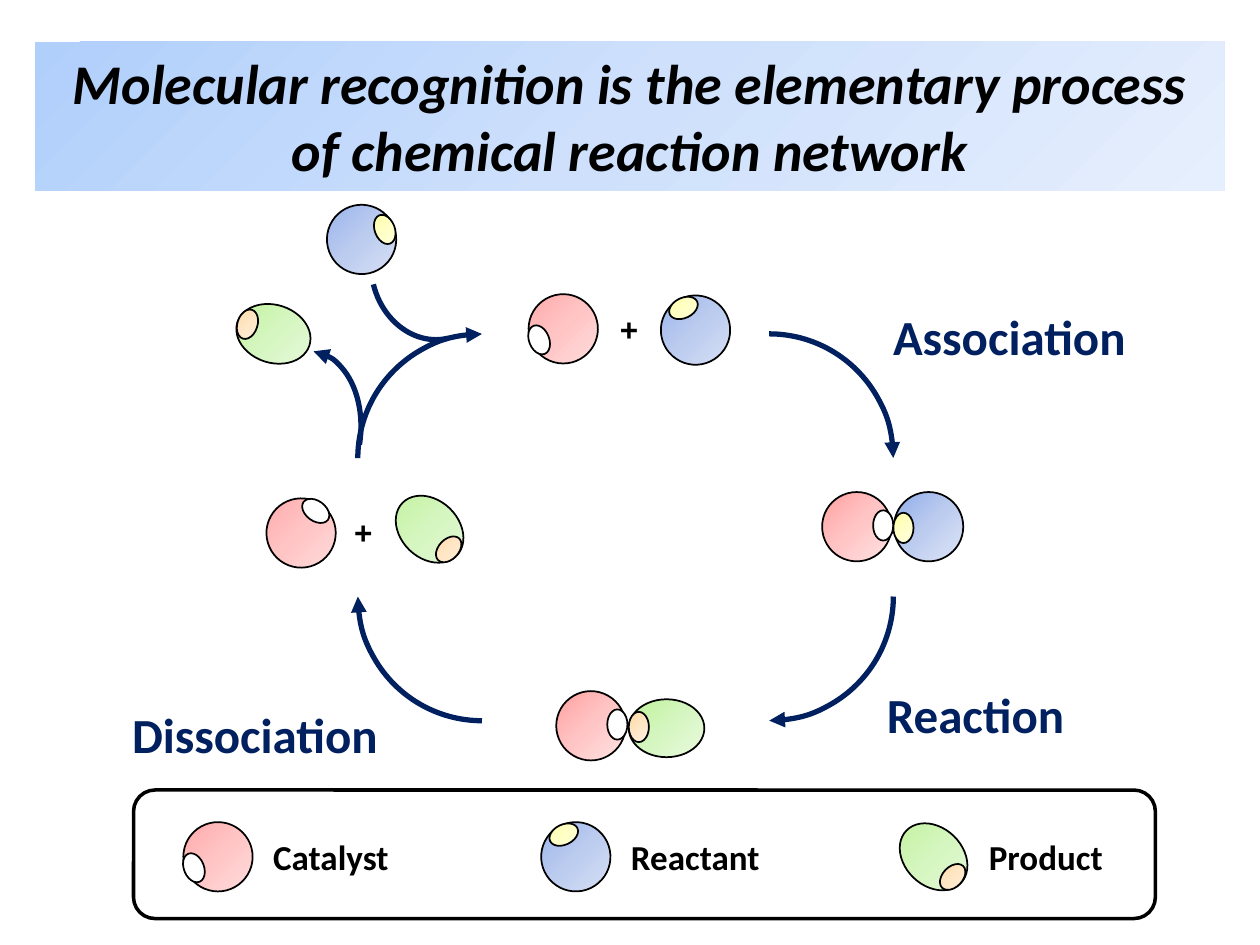
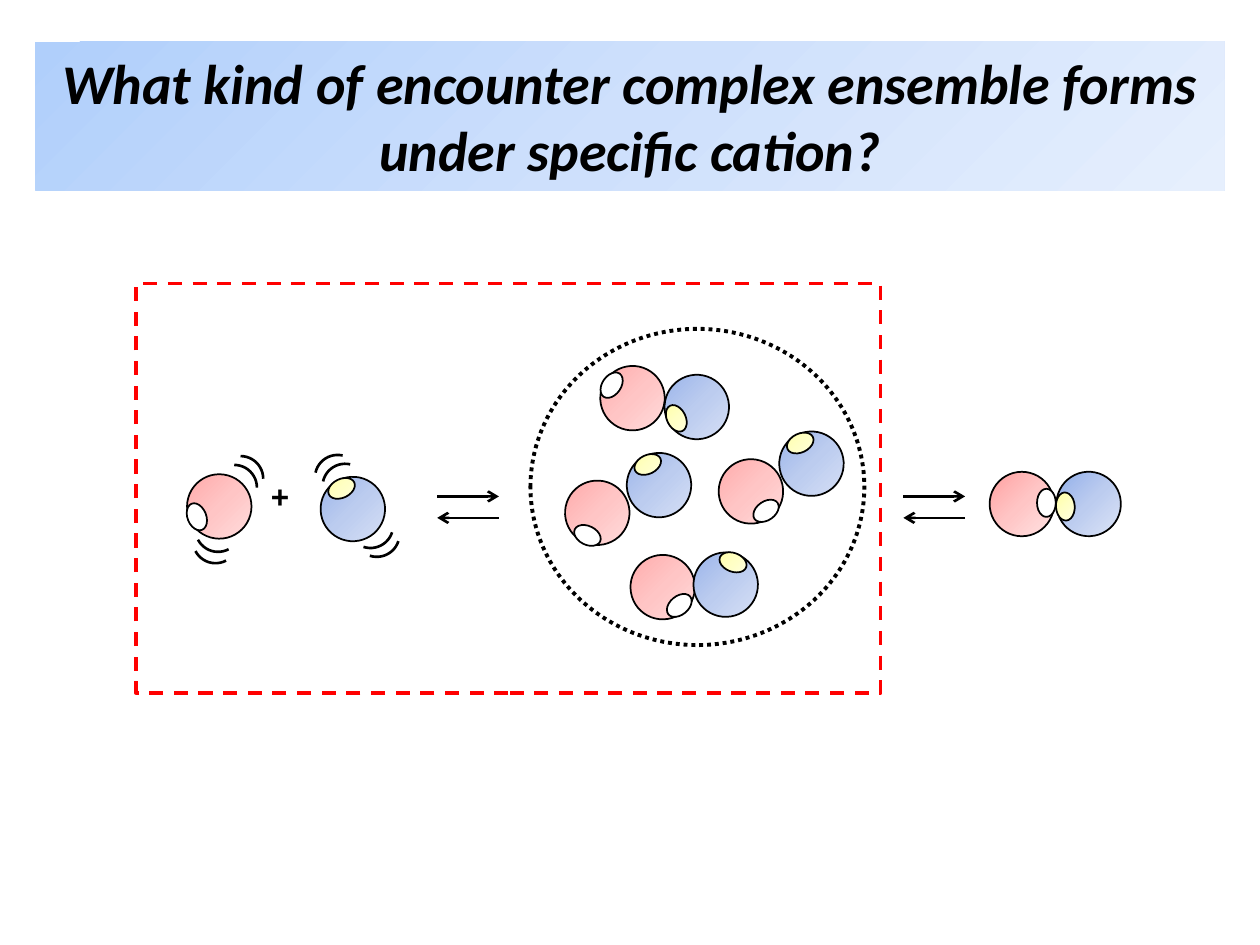
from math import cos, radians, sin

from lxml import etree
from pptx import Presentation
from pptx.dml.color import RGBColor
from pptx.enum.dml import MSO_LINE
from pptx.enum.shapes import MSO_CONNECTOR, MSO_SHAPE
from pptx.enum.text import MSO_ANCHOR, PP_ALIGN
from pptx.oxml.ns import qn
from pptx.util import Inches, Pt

ELLIPSE, ARC = MSO_SHAPE.OVAL, MSO_SHAPE.ARC
RECTANGLE, ROUNDED = MSO_SHAPE.RECTANGLE, MSO_SHAPE.ROUNDED_RECTANGLE
STRAIGHT = MSO_CONNECTOR.STRAIGHT
DASH, DOT = MSO_LINE.DASH, MSO_LINE.ROUND_DOT
MIDDLE, CENTER = MSO_ANCHOR.MIDDLE, PP_ALIGN.CENTER

BLACK = RGBColor(0x00, 0x00, 0x00)
WHITE = RGBColor(0xFF, 0xFF, 0xFF)
RED = RGBColor(0xFF, 0x00, 0x00)
NAVY = RGBColor(0x00, 0x20, 0x60)
PINKS = [RGBColor(0xFF, 0xA0, 0xA0), RGBColor(0xFF, 0xC5, 0xC5), RGBColor(0xFF, 0xE3, 0xE3)]
BLUES = [RGBColor(0x8F, 0xAD, 0xE9), RGBColor(0xBC, 0xCC, 0xEF), RGBColor(0xDE, 0xE6, 0xF7)]
GREENS = [RGBColor(0xBE, 0xF2, 0x97), RGBColor(0xD5, 0xF6, 0xC0), RGBColor(0xEA, 0xFA, 0xE0)]
YELLOWS = [RGBColor(0xFF, 0xFF, 0xA0), RGBColor(0xFF, 0xFF, 0xC5), RGBColor(0xFF, 0xFF, 0xE3)]
ORANGES = [RGBColor(0xFF, 0xD8, 0xA0), RGBColor(0xFF, 0xE6, 0xC5), RGBColor(0xFF, 0xF2, 0xE3)]
SKIES = [RGBColor(0xB0, 0xCF, 0xFB), RGBColor(0xCE, 0xE0, 0xFC), RGBColor(0xE6, 0xEF, 0xFD)]

SLIDE_SIZE = (10, 7.5)
TITLE_BOX = (0.28, 0.33, 9.44, 1.18)
SANS, MONO = "Calibri", "Courier New"

# kind: body width, body height, body fill, site fill, site offset across and along
MOLECULES = {
    "Catalyst": (0.55, 0.55, PINKS, WHITE, 0.01, 0.21),
    "Reactant": (0.55, 0.55, BLUES, YELLOWS, 0.01, 0.2),
    "Product": (0.46, 0.6, GREENS, ORANGES, -0.01, 0.22),
}
SITE = (0.24, 0.16)

CYCLE_TITLE = "Molecular recognition is the elementary process of chemical reaction network"
CYCLE_MOLECULES = [
    ("Catalyst", 4.47, 2.61, 68.2), ("Reactant", 5.52, 2.62, 154.3),
    ("Catalyst", 6.8, 4.18, 270), ("Reactant", 7.37, 4.18, 90),
    ("Catalyst", 4.69, 5.76, 270), ("Product", 5.29, 5.78, 90),
    ("Catalyst", 2.39, 4.23, 216.3), ("Product", 3.41, 4.2, 314),
    ("Reactant", 2.87, 1.9, 249.5), ("Product", 2.17, 2.65, 107.8),
]
CYCLE_PLUSES = [(4.82, 2.41), (2.71, 4.02)]
CYCLE_ARCS = [(5.12, 2.65), (5.12, 3.75), (2.84, 3.75), (2.84, 2.65)]
CYCLE_ARC_SIZE = 1.97
BRANCHES = [((2.87, 1.67, 1.11, 0.95), 256.4, None), ((1.71, 2.98, 1.35, 0.95), 98.9, "triangle")]
STEPS = [
    ("Association", 6.99, 2.38, 2.07),
    ("Reaction", 6.94, 5.38, 1.63),
    ("Dissociation", 0.95, 5.54, 2.17),
]
LEGEND_BOX = (1.06, 6.27, 8.11, 1.02)
LEGEND = [("Catalyst", 68.2), ("Reactant", 154.3), ("Product", 314)]
LEGEND_LEFT, LEGEND_STEP, LEGEND_MIDDLE = 1.73, 2.84, 6.8
LEGEND_LABEL_SIZE = (1.3, 0.44)

ENCOUNTER_TITLE = "What kind of encounter complex ensemble forms under specific cation?"
ENCOUNTER_SCALE = 0.93
ENCOUNTER_MOLECULES = [
    ("Catalyst", 1.74, 4.02, 68.2), ("Reactant", 2.8, 4.04, 154.3),
    ("Catalyst", 5.02, 3.16, 124.6), ("Reactant", 5.53, 3.23, 63.8),
    ("Catalyst", 4.74, 4.07, 26.2), ("Reactant", 5.23, 3.85, 154.3),
    ("Catalyst", 5.96, 3.9, 324.9), ("Reactant", 6.44, 3.68, 154.3),
    ("Catalyst", 5.26, 4.66, 320.6), ("Reactant", 5.76, 4.64, 201),
    ("Catalyst", 8.11, 4, 270), ("Reactant", 8.64, 4, 86.6),
]
TREMORS = [
    (0, [(1.68, 3.69), (1.73, 3.62)]),
    (152.3, [(1.55, 4.02), (1.53, 4.11)]),
    (282.8, [(2.56, 3.68), (2.5, 3.61)]),
    (108, [(2.76, 3.99), (2.81, 4.06)]),
]
TREMOR_SIZE = 0.36
ENCOUNTER_PLUS = (2.05, 3.74)
EQUILIBRIA, EQUILIBRIUM_WIDTH = [3.47, 7.17], 0.49
FORWARD_Y, BACKWARD_Y = 3.94, 4.11
ENSEMBLE_RING = (4.21, 2.61, 2.65, 2.51)
FOCUS_FRAME = (1.08, 2.25, 5.91, 3.25)


def paint(shape, fill):
    """Fill a shape with nothing, one colour or a diagonal run of colours."""
    if fill is None:
        shape.fill.background()
    elif isinstance(fill, RGBColor):
        shape.fill.solid()
        shape.fill.fore_color.rgb = fill
    else:
        shape.fill.gradient()
        gradient = shape._element.spPr.find(qn("a:gradFill"))
        gradient.set("rotWithShape", "0")
        for child in list(gradient):
            gradient.remove(child)
        stops = etree.SubElement(gradient, qn("a:gsLst"))
        for index, colour in enumerate(fill):
            stop = etree.SubElement(stops, qn("a:gs"), pos=str(index * 50000))
            etree.SubElement(stop, qn("a:srgbClr"), val=str(colour))
        etree.SubElement(gradient, qn("a:lin"), ang="2700000", scaled="0")


def add_figure(slide, preset, box, fill=None, line=BLACK, width=1, turn=0):
    """Add a preset shape with its fill, outline and rotation."""
    shape = slide.shapes.add_shape(preset, *map(Inches, box))
    shape.shadow.inherit = False
    shape.rotation = turn
    paint(shape, fill)
    if line is None:
        shape.line.fill.background()
    else:
        shape.line.color.rgb = line
        shape.line.width = Pt(width)
    return shape


def add_arrowhead(shape, kind):
    """Put an arrowhead at the far end of a line."""
    etree.SubElement(shape.line._get_or_add_ln(), qn("a:tailEnd"), type=kind)


def write(shape, text, size, colour=BLACK, font=SANS, italic=False):
    """Set the bold text of a shape."""
    shape.text_frame.text = text
    span = shape.text_frame.paragraphs[0].runs[0]
    span.font.name, span.font.size = font, Pt(size)
    span.font.bold, span.font.italic = True, italic
    span.font.color.rgb = colour


def add_label(slide, text, box, size, colour=BLACK, font=SANS):
    """Add an unwrapped text box."""
    label = slide.shapes.add_textbox(*map(Inches, box))
    label.text_frame.word_wrap = False
    write(label, text, size, colour, font)


def add_plus(slide, left, top):
    """Add a plus sign between two molecules."""
    add_label(slide, "+", (left, top, 0.35, 0.4), 18, font=MONO)


def add_molecule(slide, kind, x, y, turn, scale=1):
    """Add a body centred at x, y with its binding site turned along."""
    width, height, body, site, across, along = MOLECULES[kind]
    angle = radians(turn)
    site_x = x + scale * (across * cos(angle) - along * sin(angle))
    site_y = y + scale * (across * sin(angle) + along * cos(angle))
    parts = [(x, y, width, height, body), (site_x, site_y, *SITE, site)]
    for middle_x, middle_y, wide, high, fill in parts:
        wide, high = wide * scale, high * scale
        box = (middle_x - wide / 2, middle_y - high / 2, wide, high)
        add_figure(slide, ELLIPSE, box, fill, turn=turn)


def add_arrow(slide, start, end, y):
    """Add a level arrow."""
    arrow = slide.shapes.add_connector(
        STRAIGHT, Inches(start), Inches(y), Inches(end), Inches(y))
    arrow.line.color.rgb = BLACK
    arrow.line.width = Pt(1.5)
    add_arrowhead(arrow, "arrow")
    etree.SubElement(arrow._element.spPr, qn("a:effectLst"))


def add_title(slide, title):
    """Add the title band."""
    band = add_figure(slide, RECTANGLE, TITLE_BOX, SKIES, None)
    band.text_frame.word_wrap = True
    band.text_frame.vertical_anchor = MIDDLE
    write(band, title, 32, italic=True)
    band.text_frame.paragraphs[0].alignment = CENTER


def build_cycle(slide):
    """Draw the catalytic cycle and its legend."""
    for molecule in CYCLE_MOLECULES:
        add_molecule(slide, *molecule)
    for plus in CYCLE_PLUSES:
        add_plus(slide, *plus)
    for quarter, corner in enumerate(CYCLE_ARCS):
        box = (*corner, CYCLE_ARC_SIZE, CYCLE_ARC_SIZE)
        arc = add_figure(slide, ARC, box, None, NAVY, 3, quarter * 90)
        add_arrowhead(arc, "triangle")
    for box, turn, head in BRANCHES:
        branch = add_figure(slide, ARC, box, None, NAVY, 3, turn)
        branch._element.spPr.find(qn("a:xfrm")).set("flipH", "1")
        if head:
            add_arrowhead(branch, head)
    for text, left, top, width in STEPS:
        add_label(slide, text, (left, top, width, 0.57), 28, NAVY)
    for column, (kind, turn) in enumerate(LEGEND):
        x = LEGEND_LEFT + column * LEGEND_STEP
        add_molecule(slide, kind, x, LEGEND_MIDDLE, turn)
        box = (x + 0.34, LEGEND_MIDDLE - 0.22, *LEGEND_LABEL_SIZE)
        add_label(slide, kind, box, 20)
    add_figure(slide, ROUNDED, LEGEND_BOX, width=2)
    add_title(slide, CYCLE_TITLE)


def build_encounter(slide):
    """Draw the encounter complex ensemble between two equilibria."""
    for molecule in ENCOUNTER_MOLECULES:
        add_molecule(slide, *molecule, ENCOUNTER_SCALE)
    for turn, corners in TREMORS:
        for corner in corners:
            box = (*corner, TREMOR_SIZE, TREMOR_SIZE)
            add_figure(slide, ARC, box, width=1.5, turn=turn)
    add_plus(slide, *ENCOUNTER_PLUS)
    for left in EQUILIBRIA:
        right = left + EQUILIBRIUM_WIDTH
        add_arrow(slide, left, right, FORWARD_Y)
        add_arrow(slide, right, left, BACKWARD_Y)
    ring = add_figure(slide, ELLIPSE, ENSEMBLE_RING, width=2.25)
    ring.line.dash_style = DOT
    frame = add_figure(slide, RECTANGLE, FOCUS_FRAME, None, RED, 2)
    frame.line.dash_style = DASH
    add_title(slide, ENCOUNTER_TITLE)


def main():
    """Build the deck."""
    deck = Presentation()
    deck.slide_width, deck.slide_height = map(Inches, SLIDE_SIZE)
    blank = deck.slide_layouts[6]
    for build in (build_cycle, build_encounter):
        build(deck.slides.add_slide(blank))
    deck.save("out.pptx")


if __name__ == "__main__":
    main()
